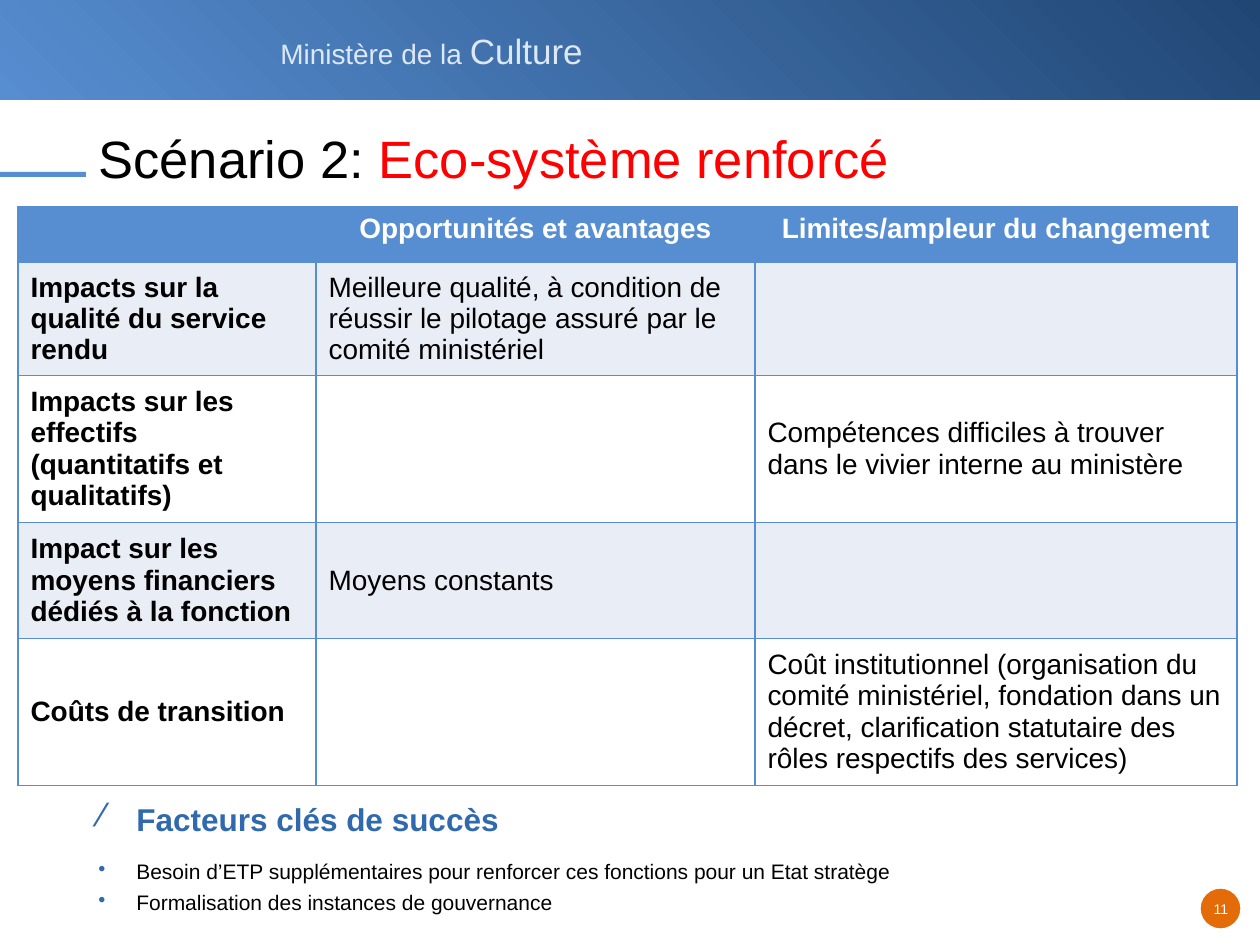
from pptx import Presentation
from pptx.dml.color import RGBColor
from pptx.enum.shapes import MSO_SHAPE as SHAPE
from pptx.enum.text import MSO_ANCHOR as ANCHOR, MSO_AUTO_SIZE as AUTO, PP_ALIGN as ALIGN
from pptx.oxml import parse_xml
from pptx.oxml.ns import nsdecls
from pptx.util import Pt

FONT = "Arial"
BLACK = RGBColor(0, 0, 0)
WHITE = RGBColor(0xFF, 0xFF, 0xFF)
RED = RGBColor(0xFF, 0, 0)
NAVY = RGBColor(0x20, 0x46, 0x74)
BLUE = RGBColor(0x57, 0x8E, 0xD1)
MID_BLUE = RGBColor(0x30, 0x69, 0xAE)
PALE_BLUE = RGBColor(0xDD, 0xE8, 0xF6)
BAND = RGBColor(0xE9, 0xED, 0xF6)
ORANGE = RGBColor(0xE3, 0x6C, 0x09)

COLUMNS = [298, 439, 482]
ROWS = [
    (55, ["", "Opportunités et avantages", "Limites/ampleur du changement"]),
    (106, ["Impacts sur la qualité du service rendu",
           "Meilleure qualité, à condition de réussir le pilotage assuré par le comité ministériel",
           ""]),
    (137, ["Impacts sur les effectifs (quantitatifs et qualitatifs)", "",
           "Compétences difficiles à trouver dans le vivier interne au ministère"]),
    (116, ["Impact sur les moyens financiers dédiés à la fonction", "Moyens constants", ""]),
    (137, ["Coûts de transition", "",
           "Coût institutionnel (organisation du comité ministériel, fondation dans un décret, "
           "clarification statutaire des rôles respectifs des services)"]),
]
SUCCESS_FACTORS = [
    "Besoin d’ETP supplémentaires pour renforcer ces fonctions pour un Etat stratège",
    "Formalisation des instances de gouvernance",
]


def px(n):
    return round(n * 914400 / 126)


def box(*lengths):
    return [px(n) for n in lengths]


def add_run(p, text, size=16, color=BLACK, bold=False):
    r = p.add_run()
    r.text = text
    r.font.name, r.font.size, r.font.bold = FONT, Pt(size), bold
    r.font.color.rgb = color


def add_shape(s, kind, *at, fill=None, line=None):
    sp = s.shapes.add_shape(kind, *box(*at))
    sp.shadow.inherit = False
    if fill is not None:
        sp.fill.solid()
        sp.fill.fore_color.rgb = fill
    if line is None:
        sp.line.fill.background()
    else:
        sp.line.color.rgb = line
        sp.line.width = Pt(0.75)
    return sp


def add_text_box(s, *at, wrap=False):
    tf = s.shapes.add_textbox(*box(*at)).text_frame
    tf.word_wrap = wrap
    return tf


def add_banner(s):
    sp = add_shape(s, SHAPE.RECTANGLE, 0, 0, 1260, 100)
    sp.fill.gradient()
    sp.fill.gradient_angle = 225
    for stop, color, position in zip(sp.fill.gradient_stops, (NAVY, BLUE), (0, 1)):
        stop.color.rgb = color
        stop.position = position
    p = add_text_box(s, 268, 23, 328, 54).paragraphs[0]
    add_run(p, "Ministère de la ", color=PALE_BLUE)
    add_run(p, "Culture", size=20, color=PALE_BLUE)


def add_page_number(s, number):
    add_shape(s, SHAPE.OVAL, 1200, 888, 41, 41, fill=ORANGE, line=WHITE)
    tf = add_text_box(s, 1183, 894, 76, 29)
    tf.margin_left = tf.margin_right = px(6)
    p = tf.paragraphs[0]
    p.alignment = ALIGN.CENTER
    add_run(p, number, size=8, color=WHITE)


def set_title(s):
    title = s.shapes.title
    title.left, title.top, title.width, title.height = box(86, 134, 1119, 102)
    tf = title.text_frame
    tf.auto_size = AUTO.NONE
    tf.vertical_anchor = ANCHOR.TOP
    p = tf.paragraphs[0]
    p.alignment = ALIGN.LEFT
    p.line_spacing = Pt(28)
    add_run(p, "Scénario 2: ", size=30)
    add_run(p, "Eco-système renforcé", size=30, color=RED)


def set_borders(cell, color, width):
    tc_pr = cell._tc.get_or_add_tcPr()
    for side in "LRTB":
        tc_pr.append(parse_xml(
            f'<a:ln{side} {nsdecls("a")} w="{Pt(width)}"><a:solidFill>'
            f'<a:srgbClr val="{color}"/></a:solidFill></a:ln{side}>'))


def fill_cell(cell, text, row, column):
    header = row == 0
    set_borders(cell, BLUE, 0.96)
    cell.fill.solid()
    cell.fill.fore_color.rgb = BLUE if header else BAND if row % 2 else WHITE
    cell.vertical_anchor = ANCHOR.TOP if header else ANCHOR.MIDDLE
    if text:
        p = cell.text_frame.paragraphs[0]
        p.alignment = ALIGN.CENTER if header else ALIGN.LEFT
        add_run(p, text, color=WHITE if header else BLACK, bold=header or column == 0)


def add_impact_table(s):
    height = sum(h for h, _ in ROWS)
    table = s.shapes.add_table(len(ROWS), len(COLUMNS),
                               *box(18, 207, sum(COLUMNS), height)).table
    table.horz_banding = False
    for column, width in zip(table.columns, COLUMNS):
        column.width = px(width)
    for i, (row_height, texts) in enumerate(ROWS):
        table.rows[i].height = px(row_height)
        for j, text in enumerate(texts):
            fill_cell(table.cell(i, j), text, i, j)


def add_bullet(p, char, text, space_after, **font):
    p_pr = p._p.get_or_add_pPr()
    p_pr.set("marL", str(px(38)))
    p_pr.set("indent", str(-px(38)))
    p_pr.append(parse_xml(f'<a:buClr {nsdecls("a")}><a:srgbClr val="{MID_BLUE}"/></a:buClr>'))
    p_pr.append(parse_xml(f'<a:buChar {nsdecls("a")} char="{char}"/>'))
    p.space_after = Pt(space_after)
    add_run(p, text, **font)


def add_success_factors(s):
    tf = add_text_box(s, 86, 794, 1119, 130, wrap=True)
    add_bullet(tf.paragraphs[0], "⁄", "Facteurs clés de succès", 12,
               size=18, color=MID_BLUE, bold=True)
    for factor in SUCCESS_FACTORS:
        add_bullet(tf.add_paragraph(), "•", factor, 3, size=12)


def main():
    prs = Presentation()
    prs.slide_width, prs.slide_height = box(1260, 945)
    s = prs.slides.add_slide(prs.slide_layouts[5])
    add_banner(s)
    add_shape(s, SHAPE.RECTANGLE, 0, 172, 86, 5, fill=BLUE)
    add_page_number(s, "11")
    set_title(s)
    add_impact_table(s)
    add_success_factors(s)
    prs.save("out.pptx")


if __name__ == "__main__":
    main()
